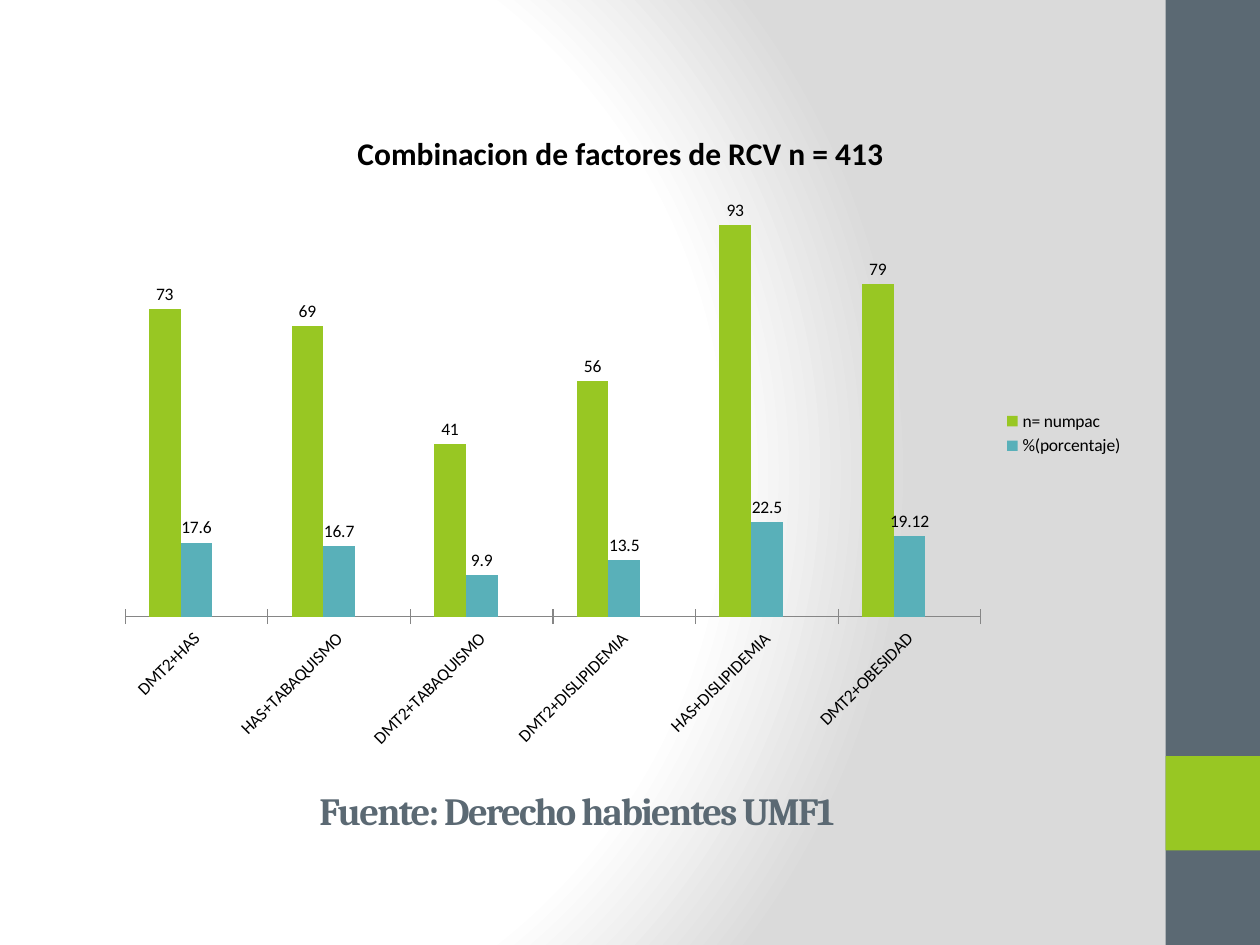
from dataclasses import dataclass

from lxml import etree
from pptx import Presentation
from pptx.chart.data import CategoryChartData
from pptx.dml.color import RGBColor
from pptx.enum.chart import (
    XL_CHART_TYPE as ChartType,
    XL_LABEL_POSITION as LabelPosition,
    XL_LEGEND_POSITION as LegendPosition,
    XL_TICK_MARK as TickMark,
)
from pptx.enum.shapes import MSO_SHAPE as ShapeType
from pptx.enum.text import MSO_ANCHOR as Anchor, PP_ALIGN as Align
from pptx.oxml import parse_xml
from pptx.oxml.ns import nsdecls, qn
from pptx.util import Inches, Pt

COLORS = {
    "slate": "5B6973",
    "green": "98C723",
    "teal": "59B0B9",
    "amber": "DEAE00",
    "axis": "868686",
    "black": "000000",
    "white": "FFFFFF",
    "gray": "DADADA",
}


@dataclass
class Panel:
    top: float
    height: float
    color: str


@dataclass
class Series:
    name: str
    values: list
    color: str


PANELS = [Panel(0, 7.5, "slate"), Panel(6, 0.75, "green")]
CATEGORIES = [
    "DMT2+HAS",
    "HAS+TABAQUISMO",
    "DMT2+TABAQUISMO",
    "DMT2+DISLIPIDEMIA",
    "HAS+DISLIPIDEMIA",
    "DMT2+OBESIDAD",
]
SERIES = [
    Series("n= numpac", [73, 69, 41, 56, 93, 79], "green"),
    Series("%(porcentaje)", [17.6, 16.7, 9.9, 13.5, 22.5, 19.12], "teal"),
    Series("Series 3", [None] * len(CATEGORIES), "amber"),
]


def rgb(name: str) -> RGBColor:
    return RGBColor.from_string(COLORS[name])


def style_font(font, name: str, size: float, color: str, bold: bool = False) -> None:
    font.name = name
    font.size = Pt(size)
    font.bold = bold
    font.color.rgb = rgb(color)


def paint_background(slide) -> None:
    fill = slide.background.fill
    fill.gradient()
    stops = "".join(
        f'<a:gs pos="{position * 1000}"><a:srgbClr val="{COLORS[color]}"/></a:gs>'
        for position, color in [(0, "white"), (75, "white"), (100, "gray")]
    )
    gradient = parse_xml(
        f'<a:gradFill rotWithShape="1" {nsdecls("a")}><a:gsLst>{stops}</a:gsLst>'
        '<a:path path="circle"><a:fillToRect l="20000" t="50000" r="100000" b="50000"/>'
        "</a:path></a:gradFill>"
    )
    default = next(slide.background._cSld.iter(qn("a:gradFill")))
    default.getparent().replace(default, gradient)


def add_panel(slide, panel: Panel) -> None:
    shape = slide.shapes.add_shape(
        ShapeType.RECTANGLE, Inches(9.25), Inches(panel.top), Inches(0.75), Inches(panel.height)
    )
    shape.shadow.inherit = False
    shape.fill.solid()
    shape.fill.fore_color.rgb = rgb(panel.color)
    shape.line.fill.background()


def add_source_title(slide) -> None:
    box = slide.shapes.add_textbox(Inches(0.33), Inches(6.01), Inches(8.5), Inches(0.65))
    text_frame = box.text_frame
    text_frame.word_wrap = True
    text_frame.vertical_anchor = Anchor.BOTTOM
    text_frame.text = "Fuente: Derecho habientes UMF1"
    paragraph = text_frame.paragraphs[0]
    paragraph.alignment = Align.CENTER
    run = paragraph.runs[0]
    style_font(run.font, "Cambria", 22, "slate", bold=True)
    run._r.get_or_add_rPr().set("spc", "-100")


def hide_legend_entry(legend, index: int) -> None:
    entry = etree.Element(qn("c:legendEntry"))
    etree.SubElement(entry, qn("c:idx")).set("val", str(index))
    etree.SubElement(entry, qn("c:delete")).set("val", "1")
    legend._element.find(qn("c:legendPos")).addnext(entry)


def style_series(plot_series, color: str) -> None:
    plot_series.format.fill.solid()
    plot_series.format.fill.fore_color.rgb = rgb(color)
    labels = plot_series.data_labels
    labels.show_value = True
    labels.position = LabelPosition.OUTSIDE_END
    style_font(labels.font, "Calibri", 10, "black")


def add_risk_chart(slide) -> None:
    chart_data = CategoryChartData()
    chart_data.categories = CATEGORIES
    for series in SERIES:
        chart_data.add_series(series.name, series.values)
    chart = slide.shapes.add_chart(
        ChartType.COLUMN_CLUSTERED,
        Inches(0.83), Inches(0.84), Inches(8.19), Inches(5.2),
        chart_data,
    ).chart
    style_font(chart.font, "Calibri", 10, "black")

    chart.has_title = True
    title_frame = chart.chart_title.text_frame
    title_frame.text = "Combinacion de factores de RCV n = 413"
    style_font(title_frame.paragraphs[0].runs[0].font, "Calibri", 18, "black", bold=True)
    chart.chart_title.include_in_layout = False

    chart.has_legend = True
    chart.legend.position = LegendPosition.RIGHT
    chart.legend.include_in_layout = False
    hide_legend_entry(chart.legend, 2)

    chart.value_axis.visible = False
    chart.value_axis.has_major_gridlines = False
    chart.value_axis.minimum_scale = 0
    chart.value_axis.maximum_scale = 100
    chart.category_axis.major_tick_mark = TickMark.CROSS
    chart.category_axis.format.line.color.rgb = rgb("axis")

    plot = chart.plots[0]
    plot.gap_width = 150
    plot.vary_by_categories = False
    for plot_series, series in zip(plot.series, SERIES):
        style_series(plot_series, series.color)


def main() -> None:
    presentation = Presentation()
    presentation.slide_width = Inches(10)
    presentation.slide_height = Inches(7.5)
    slide = presentation.slides.add_slide(presentation.slide_layouts[6])
    paint_background(slide)
    for panel in PANELS:
        add_panel(slide, panel)
    add_source_title(slide)
    add_risk_chart(slide)
    presentation.save("out.pptx")


if __name__ == "__main__":
    main()
